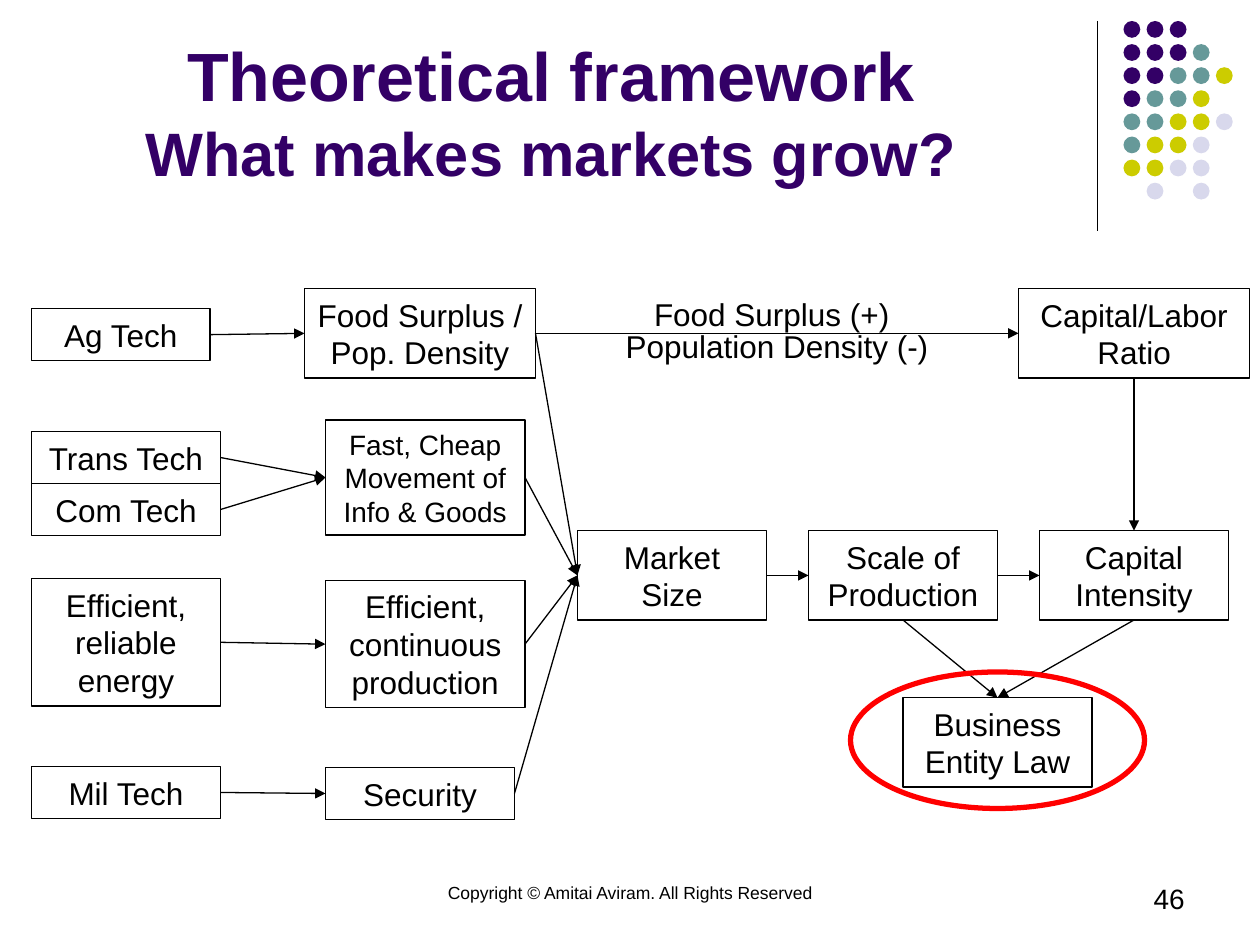
from lxml.etree import SubElement
from pptx import Presentation
from pptx.dml.color import RGBColor
from pptx.enum.shapes import MSO_CONNECTOR as CONN, MSO_SHAPE as SHAPE
from pptx.enum.text import MSO_ANCHOR as ANCHOR, PP_ALIGN as ALIGN
from pptx.oxml.ns import qn
from pptx.util import Inches, Pt

COLORS = {
    "black": "000000",
    "purple": "330066",
    "teal": "669999",
    "olive": "CCCC00",
    "lilac": "D8D8EC",
    "red": "FF0000",
}
UNIT = Inches(1) / 12
TOP, LEFT, BOTTOM, RIGHT = range(4)

DOT_COLORS = {"P": "purple", "T": "teal", "O": "olive", "L": "lilac"}
DOT_ROWS = ["PPP", "PPPT", "PPTTO", "PTTO", "TTOOL", "TOOL", "OOLL", " L L"]

BOXES = {
    "ag": ("Ag Tech", 3, 29.4, 17, 4.95),
    "trans": ("Trans Tech", 3, 41.1, 18, 4.95),
    "com": ("Com Tech", 3, 46.05, 18, 4.95),
    "energy": ("Efficient, reliable energy", 3, 55.1, 18, 12.15),
    "mil": ("Mil Tech", 3, 73, 18, 4.95),
    "food": ("Food Surplus / Pop. Density", 29, 27.5, 22, 8.5),
    "movement": ("Fast, Cheap Movement of Info & Goods", 31, 40, 19, 10.95),
    "production": ("Efficient, continuous production", 31, 55.3, 19, 12.1),
    "security": ("Security", 31, 73.1, 18, 4.95),
    "market": ("Market Size", 55, 50.55, 18, 8.5),
    "scale": ("Scale of Production", 77, 50.55, 18, 8.5),
    "intensity": ("Capital Intensity", 99, 50.55, 18, 8.5),
    "ratio": ("Capital/Labor Ratio", 97, 27.5, 22, 8.5),
    "law": ("Business Entity Law", 86, 66.45, 18, 8.5),
}
SMALL_BOXES = {"movement": 16}

ACROSS = [
    ("ag", "food"), ("trans", "movement"), ("com", "movement"),
    ("energy", "production"), ("mil", "security"), ("food", "market"),
    ("movement", "market"), ("production", "market"), ("security", "market"),
    ("market", "scale"), ("scale", "intensity"), ("food", "ratio"),
]
DOWN = [("ratio", "intensity"), ("scale", "law"), ("intensity", "law")]


def grid(*cells):
    return [round(c * UNIT) for c in cells]


def rgb(name):
    return RGBColor.from_string(COLORS[name])


def write(s, *lines, size=18, color="black", bold=False, align=ALIGN.CENTER,
          anchor=ANCHOR.TOP):
    tf = s.text_frame
    tf.word_wrap = True
    tf.vertical_anchor = anchor
    p = tf.paragraphs[0]
    p.alignment = align
    for i, line in enumerate(lines):
        text, line_size = line if isinstance(line, tuple) else (line, size)
        if i:
            p.add_line_break()
        r = p.add_run()
        r.text = text
        r.font.name = "Arial"
        r.font.size = Pt(line_size)
        r.font.bold = bold
        r.font.color.rgb = rgb(color)


def add_label(slide, cells, *lines, **fmt):
    write(slide.shapes.add_textbox(*grid(*cells)), *lines, **fmt)


def add_figure(slide, kind, cells, fill=None, line=None, width=0.75):
    s = slide.shapes.add_shape(kind, *grid(*cells))
    s.shadow.inherit = False
    if fill:
        s.fill.solid()
        s.fill.fore_color.rgb = rgb(fill)
    else:
        s.fill.background()
    if line:
        s.line.color.rgb = rgb(line)
        s.line.width = Pt(width)
    else:
        s.line.fill.background()
    return s


def add_box(slide, text, *cells, size=18):
    s = add_figure(slide, SHAPE.RECTANGLE, cells, line="black")
    write(s, text, size=size, anchor=ANCHOR.MIDDLE)
    return s


def add_line(slide, *cells):
    c = slide.shapes.add_connector(CONN.STRAIGHT, *grid(*cells))
    c.line.color.rgb = rgb("black")
    c.line.width = Pt(0.75)
    SubElement(c._element.spPr, qn("a:effectLst"))
    return c


def add_arrow(slide, start, start_side, end, end_side):
    c = add_line(slide, 0, 0, 0, 0)
    c.begin_connect(start, start_side)
    c.end_connect(end, end_side)
    SubElement(c.line._get_or_add_ln(), qn("a:tailEnd"), type="triangle")


def add_dots(slide, left=107, top=2, pitch=2.2, size=1.6):
    for row, marks in enumerate(DOT_ROWS):
        for col, mark in enumerate(marks):
            if mark in DOT_COLORS:
                cells = left + col * pitch, top + row * pitch, size, size
                add_figure(slide, SHAPE.OVAL, cells, fill=DOT_COLORS[mark])


def main():
    prs = Presentation()
    prs.slide_width, prs.slide_height = Inches(10), Inches(7.5)
    slide = prs.slides.add_slide(prs.slide_layouts[6])

    add_line(slide, 104.5, 2, 104.5, 22)
    add_dots(slide)
    add_label(slide, (0, 1.6, 105, 17), ("Theoretical framework", 39),
              ("What makes markets grow?", 35), color="purple", bold=True,
              anchor=ANCHOR.BOTTOM)

    boxes = {key: add_box(slide, *box, size=SMALL_BOXES.get(key, 18))
             for key, box in BOXES.items()}
    for start, end in ACROSS:
        add_arrow(slide, boxes[start], RIGHT, boxes[end], LEFT)
    for start, end in DOWN:
        add_arrow(slide, boxes[start], BOTTOM, boxes[end], TOP)

    add_label(slide, (58, 27.5, 31, 4.8), "Food Surplus (+)")
    add_label(slide, (58, 30.6, 32, 4.8), "Population Density (-)")
    add_figure(slide, SHAPE.OVAL, (81, 64, 28, 13), line="red", width=3)

    add_label(slide, (41, 83.4, 38, 6),
              "Copyright © Amitai Aviram. All Rights Reserved", size=10)
    add_label(slide, (86, 83.4, 28, 6), "46", size=16, align=ALIGN.RIGHT)
    prs.save("out.pptx")


if __name__ == "__main__":
    main()
